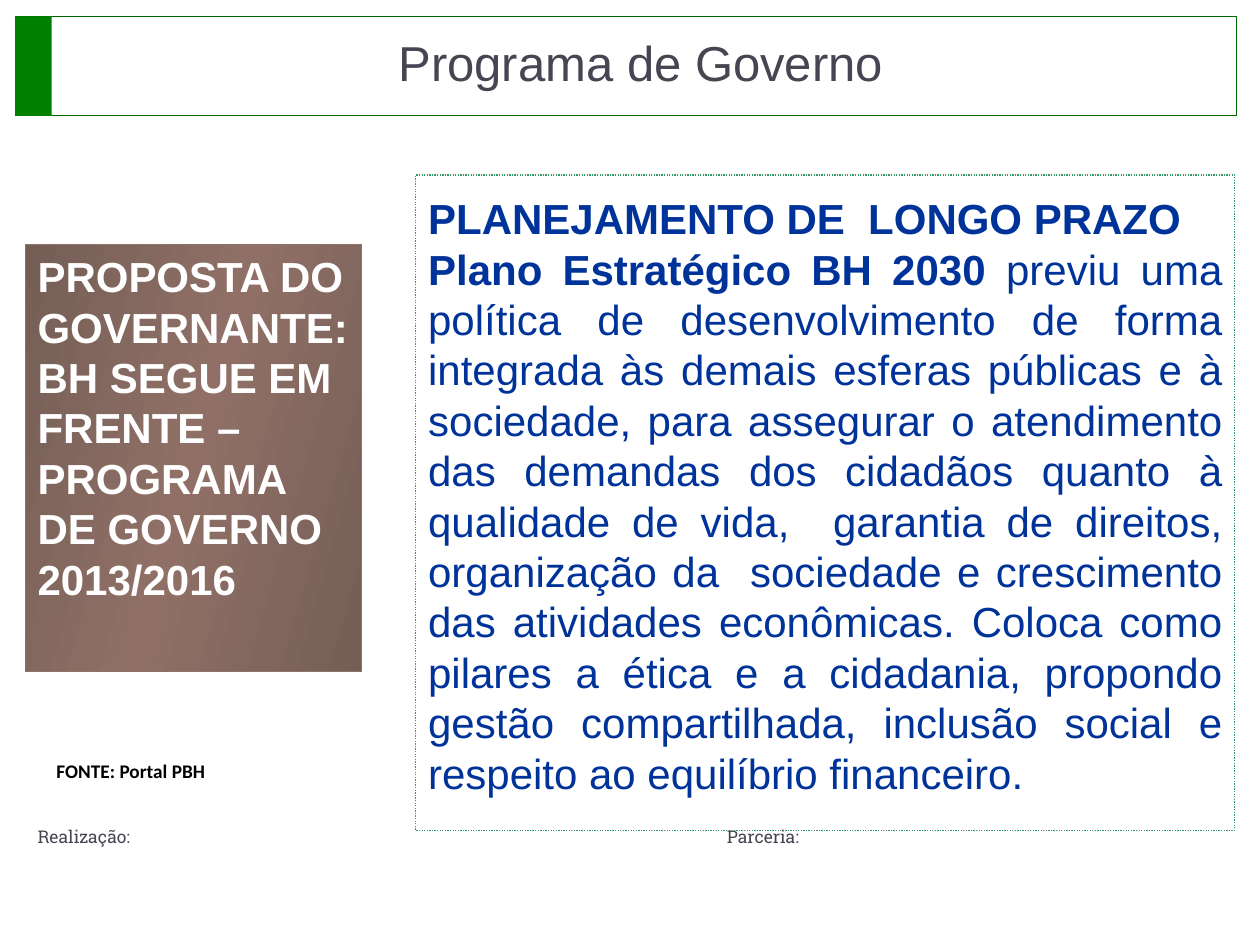
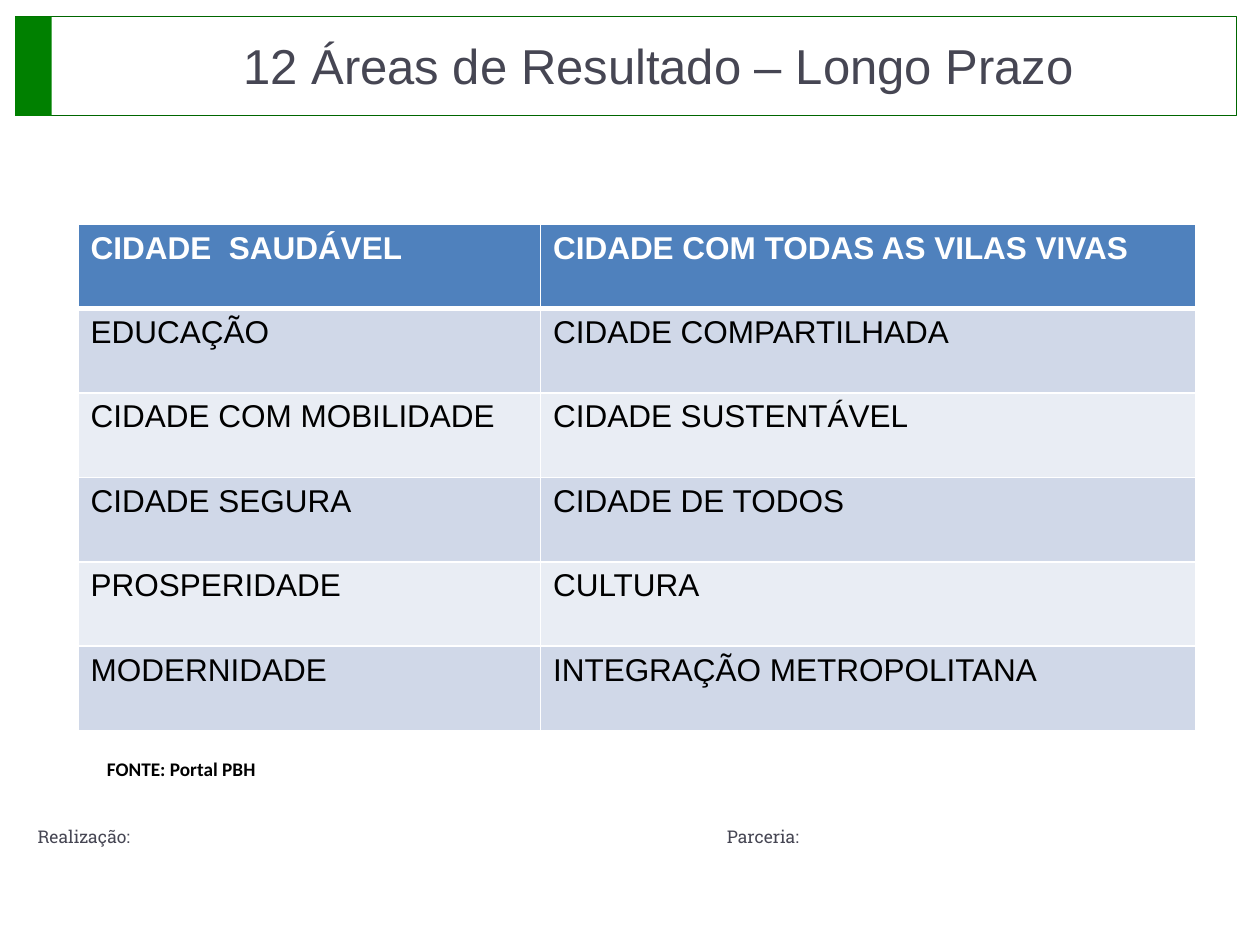
from dataclasses import dataclass
from copy import deepcopy

from lxml import etree
from pptx import Presentation
from pptx.dml.color import RGBColor
from pptx.enum.dml import MSO_LINE
from pptx.enum.shapes import MSO_SHAPE
from pptx.enum.text import MSO_ANCHOR, PP_ALIGN
from pptx.oxml.ns import qn
from pptx.util import Inches, Pt

RECTANGLE = MSO_SHAPE.RECTANGLE
DOTTED = MSO_LINE.ROUND_DOT
TOP, MIDDLE = MSO_ANCHOR.TOP, MSO_ANCHOR.MIDDLE
LEFT, CENTER, JUSTIFY = PP_ALIGN.LEFT, PP_ALIGN.CENTER, PP_ALIGN.JUSTIFY

COLORS = {
    "title": "464653",
    "frame": "006600",
    "band": "008000",
    "plan_border": "329A66",
    "plan_text": "003399",
    "proposal_edge": "745E56",
    "proposal_center": "907066",
    "proposal_border": "8E736A",
    "table_header": "4F81BD",
    "row_dark": "D0D8E8",
    "row_light": "E9EDF4",
    "white": "FFFFFF",
    "black": "000000",
}

AREAS = [
    ("CIDADE  SAUDÁVEL", "CIDADE COM TODAS AS VILAS VIVAS"),
    ("EDUCAÇÃO", "CIDADE COMPARTILHADA"),
    ("CIDADE COM MOBILIDADE", "CIDADE SUSTENTÁVEL"),
    ("CIDADE SEGURA", "CIDADE DE TODOS"),
    ("PROSPERIDADE", "CULTURA"),
    ("MODERNIDADE", "INTEGRAÇÃO METROPOLITANA"),
]
COLUMN_WIDTHS = (3.67, 5.2)
ROW_HEIGHT = 0.67

PLAN_TEXT = (
    "previu uma política de desenvolvimento de forma integrada às demais esferas "
    "públicas e à sociedade, para assegurar o atendimento das demandas dos cidadãos "
    "quanto à qualidade de vida,  garantia de direitos, organização da  sociedade e "
    "crescimento das atividades econômicas. Coloca como pilares a ética e a cidadania, "
    "propondo gestão compartilhada, inclusão social e respeito ao equilíbrio financeiro."
)


@dataclass(frozen=True)
class Box:
    left: float
    top: float
    width: float
    height: float

    def lengths(self):
        return [Inches(value) for value in (self.left, self.top, self.width, self.height)]


@dataclass(frozen=True)
class TextStyle:
    size: float
    color: str
    font: str = "Arial"
    bold: bool = False


TITLE = TextStyle(28, "title")
FOOTER = TextStyle(10, "title", "Roboto Slab")
SOURCE = TextStyle(11, "black", "Calibri", True)
PLAN = TextStyle(24, "plan_text")
PLAN_BOLD = TextStyle(24, "plan_text", bold=True)
PROPOSAL = TextStyle(24, "white", bold=True)
TABLE_HEADER = TextStyle(18, "white", bold=True)
TABLE_BODY = TextStyle(18, "black")


def rgb(name: str) -> RGBColor:
    return RGBColor.from_string(COLORS[name])


def add_run(paragraph, text: str, style: TextStyle) -> None:
    run = paragraph.add_run()
    run.text = text
    run.font.name = style.font
    run.font.size = Pt(style.size)
    run.font.bold = style.bold
    run.font.color.rgb = rgb(style.color)


def write_paragraphs(shape, paragraphs, align=LEFT, anchor=TOP, spacing=None) -> None:
    frame = shape.text_frame
    frame.word_wrap = True
    frame.vertical_anchor = anchor
    for index, runs in enumerate(paragraphs):
        paragraph = frame.add_paragraph() if index else frame.paragraphs[0]
        paragraph.alignment = align
        if spacing:
            paragraph.line_spacing = Pt(spacing)
        for text, style in runs:
            add_run(paragraph, text, style)


def add_label(slide, box: Box, text: str, style: TextStyle, align=LEFT):
    label = slide.shapes.add_textbox(*box.lengths())
    write_paragraphs(label, [[(text, style)]], align)
    return label


def add_rectangle(slide, box: Box, fill: str = "", line: str = "", width: float = 0.75):
    shape = slide.shapes.add_shape(RECTANGLE, *box.lengths())
    shape.shadow.inherit = False
    if fill:
        shape.fill.solid()
        shape.fill.fore_color.rgb = rgb(fill)
    else:
        shape.fill.background()
    if line:
        shape.line.color.rgb = rgb(line)
        shape.line.width = Pt(width)
    else:
        shape.line.fill.background()
    return shape


def add_footer(slide) -> None:
    footer = add_label(slide, Box(0.2, 6.51, 9.55, 0.31), "Realização:\tParceria:", FOOTER)
    properties = footer.text_frame.paragraphs[0]._p.get_or_add_pPr()
    tabs = etree.SubElement(properties, qn("a:tabLst"))
    etree.SubElement(tabs, qn("a:tab"), pos=str(Inches(5.47)), algn="l")


def add_base_slide(presentation, title: str, title_box: Box, source_box: Box):
    slide = presentation.slides.add_slide(presentation.slide_layouts[6])
    add_footer(slide)
    add_rectangle(slide, Box(0.12, 0.13, 9.69, 0.79), line="frame", width=0.5)
    add_rectangle(slide, Box(0.12, 0.13, 0.29, 0.79), fill="band")
    add_label(slide, title_box, title, TITLE, CENTER)
    add_label(slide, source_box, "FONTE: Portal PBH", SOURCE)
    return slide


def apply_gradient(shape, names, angle: float) -> None:
    fill = shape.fill
    fill.gradient()
    fill.gradient_angle = angle
    stop_list = shape._element.spPr.find(qn("a:gradFill")).find(qn("a:gsLst"))
    stop_list.append(deepcopy(stop_list[-1]))
    for index, (stop, name) in enumerate(zip(fill.gradient_stops, names)):
        stop.position = index / (len(names) - 1)
        stop.color.rgb = rgb(name)


def set_borders(cell, bottom_width: float) -> None:
    properties = cell._tc.get_or_add_tcPr()
    widths = {"lnL": 1, "lnR": 1, "lnT": 1, "lnB": bottom_width}
    for index, (side, width) in enumerate(widths.items()):
        line = etree.Element(qn(f"a:{side}"), w=str(Pt(width)))
        solid = etree.SubElement(line, qn("a:solidFill"))
        etree.SubElement(solid, qn("a:srgbClr"), val=COLORS["white"])
        properties.insert(index, line)


def add_areas_table(slide) -> None:
    box = Box(0.62, 1.78, sum(COLUMN_WIDTHS), ROW_HEIGHT * len(AREAS))
    table = slide.shapes.add_table(len(AREAS), len(COLUMN_WIDTHS), *box.lengths()).table
    for column, width in zip(table.columns, COLUMN_WIDTHS):
        column.width = Inches(width)
    for row_index, areas in enumerate(AREAS):
        table.rows[row_index].height = Inches(ROW_HEIGHT)
        is_header = row_index == 0
        band = "row_dark" if row_index % 2 else "row_light"
        for column_index, area in enumerate(areas):
            cell = table.cell(row_index, column_index)
            cell.fill.solid()
            cell.fill.fore_color.rgb = rgb("table_header" if is_header else band)
            style = TABLE_HEADER if is_header else TABLE_BODY
            add_run(cell.text_frame.paragraphs[0], area, style)
            set_borders(cell, 3 if is_header else 1)


def build_program_slide(presentation) -> None:
    slide = add_base_slide(
        presentation, "Programa de Governo",
        Box(0.48, 0.21, 9.21, 0.34), Box(0.35, 5.98, 2.13, 0.28),
    )
    plan = add_rectangle(slide, Box(3.3, 1.39, 6.5, 5.2), line="plan_border")
    plan.line.dash_style = DOTTED
    plan.text_frame.margin_bottom = Inches(0.17)
    paragraphs = [
        [("PLANEJAMENTO DE  LONGO PRAZO", PLAN_BOLD)],
        [("Plano Estratégico BH 2030 ", PLAN_BOLD), (PLAN_TEXT, PLAN)],
    ]
    write_paragraphs(plan, paragraphs, JUSTIFY, MIDDLE, 28.8)

    proposal = add_rectangle(slide, Box(0.2, 1.94, 2.67, 3.39), line="proposal_border")
    apply_gradient(proposal, ("proposal_edge", "proposal_center", "proposal_edge"), 344)
    proposal_text = (
        "PROPOSTA DO GOVERNANTE: BH SEGUE EM FRENTE – PROGRAMA DE GOVERNO 2013/2016"
    )
    write_paragraphs(proposal, [[(proposal_text, PROPOSAL)]], spacing=28.8)


def build_areas_slide(presentation) -> None:
    slide = add_base_slide(
        presentation, "12 Áreas de Resultado – Longo Prazo",
        Box(0.62, 0.23, 9.21, 0.34), Box(0.75, 5.96, 2.13, 0.28),
    )
    add_areas_table(slide)


def main() -> None:
    presentation = Presentation()
    presentation.slide_width = Inches(10)
    presentation.slide_height = Inches(7.5)
    build_program_slide(presentation)
    build_areas_slide(presentation)
    presentation.save("out.pptx")


if __name__ == "__main__":
    main()
